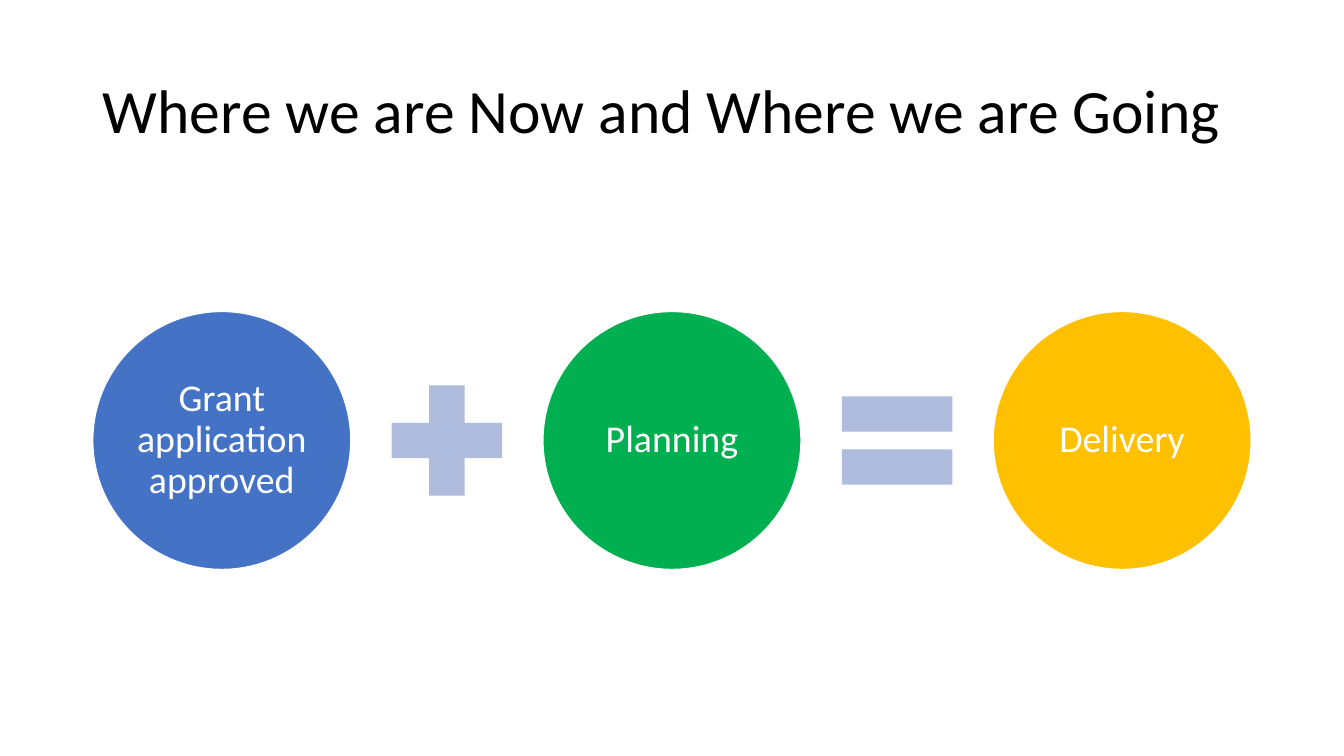
from dataclasses import dataclass

from pptx import Presentation
from pptx.dml.color import RGBColor
from pptx.enum.shapes import MSO_SHAPE
from pptx.enum.text import MSO_ANCHOR, MSO_AUTO_SIZE, PP_ALIGN
from pptx.shapes.autoshape import Shape
from pptx.slide import Slide
from pptx.util import Inches, Pt

FIRST_LEFT = 0.92
PITCH = 4.465
CENTRE_Y = 4.37
STAGE_SIZE = 2.56
OPERATOR_SIZE = 1.49
OPERATOR_COLOUR = "B0BCDE"


@dataclass(frozen=True)
class Stage:
    label: str
    colour: str


@dataclass(frozen=True)
class TextStyle:
    size: float
    colour: str
    align: PP_ALIGN
    inset: float


STAGES = [
    Stage("Grant application approved", "4472C4"),
    Stage("Planning", "00B050"),
    Stage("Delivery", "FFC000"),
]
OPERATORS = [MSO_SHAPE.MATH_PLUS, MSO_SHAPE.MATH_EQUAL]
TITLE_STYLE = TextStyle(44, "000000", PP_ALIGN.LEFT, 0.1)
STAGE_STYLE = TextStyle(27, "FFFFFF", PP_ALIGN.CENTER, 0.04)


def colour(value: str) -> RGBColor:
    return RGBColor.from_string(value)


def apply(target: object, formats: dict[str, object]) -> None:
    for attribute, value in formats.items():
        setattr(target, attribute, value)


def write(holder: Shape, text: str, style: TextStyle) -> None:
    frame = holder.text_frame
    frame.text = text
    sides = ("margin_left", "margin_top", "margin_right", "margin_bottom")
    apply(frame, {
        "word_wrap": True,
        "auto_size": MSO_AUTO_SIZE.NONE,
        "vertical_anchor": MSO_ANCHOR.MIDDLE,
        **{side: Inches(style.inset) for side in sides},
    })
    paragraph = frame.paragraphs[0]
    apply(paragraph, {"alignment": style.align, "line_spacing": 0.9})
    apply(paragraph.font, {"name": "Calibri", "size": Pt(style.size)})
    paragraph.font.color.rgb = colour(style.colour)


def draw(slide: Slide, preset: MSO_SHAPE, centre_x: float, size: float, fill: str) -> Shape:
    shape = slide.shapes.add_shape(
        preset, Inches(centre_x - size / 2), Inches(CENTRE_Y - size / 2),
        Inches(size), Inches(size))
    shape.shadow.inherit = False
    shape.fill.solid()
    shape.fill.fore_color.rgb = colour(fill)
    shape.line.fill.background()
    return shape


def draw_stage(slide: Slide, stage: Stage, centre_x: float) -> None:
    circle = draw(slide, MSO_SHAPE.OVAL, centre_x, STAGE_SIZE, stage.colour)
    circle.line.color.rgb = colour("FFFFFF")
    circle.line.width = Pt(1)
    write(circle, stage.label, STAGE_STYLE)


def main() -> None:
    presentation = Presentation()
    apply(presentation, {"slide_width": Inches(13.33), "slide_height": Inches(7.5)})
    slide = presentation.slides.add_slide(presentation.slide_layouts[5])

    title = slide.shapes.title
    apply(title, {"left": Inches(FIRST_LEFT), "top": Inches(0.4),
                  "width": Inches(11.5), "height": Inches(1.45)})
    write(title, "Where we are Now and Where we are Going", TITLE_STYLE)

    first_centre = FIRST_LEFT + STAGE_SIZE / 2
    for index, stage in enumerate(STAGES):
        draw_stage(slide, stage, first_centre + index * PITCH)
    for index, operator in enumerate(OPERATORS):
        draw(slide, operator, first_centre + (index + 0.5) * PITCH,
             OPERATOR_SIZE, OPERATOR_COLOUR)

    presentation.save("out.pptx")


if __name__ == "__main__":
    main()
